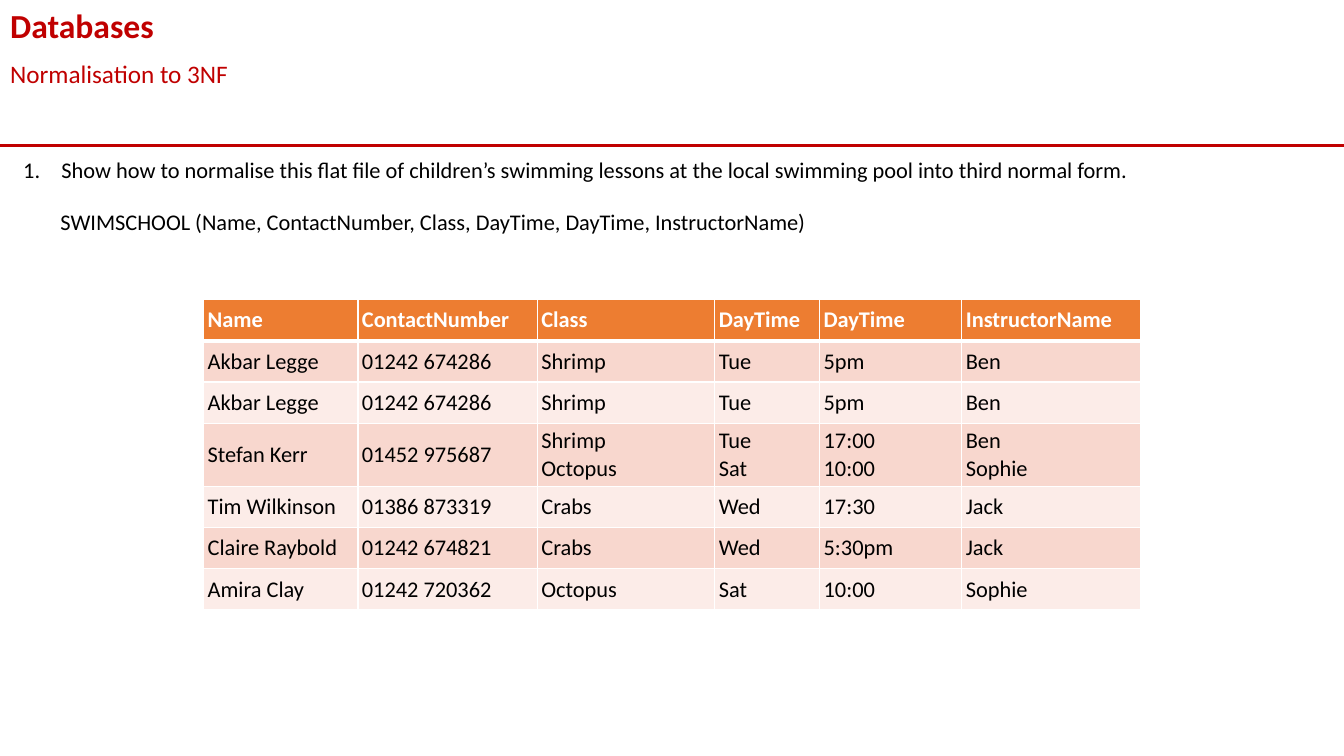
"""Build the Databases slide on normalisation to third normal form."""
from dataclasses import dataclass

from lxml import etree
from pptx import Presentation
from pptx import util as u
from pptx.dml.color import RGBColor
from pptx.enum import shapes, text
from pptx.oxml import ns

PX = u.Inches(1) // 100


@dataclass(frozen=True)
class Theme:
    font: str = "Calibri"
    accent: str = "C00000"
    ink: str = "000000"
    white: str = "FFFFFF"
    header: str = "ED7D31"
    bands: tuple[str, str] = ("F8D7CE", "FCECE8")
    title: int = 24
    subtitle: int = 18
    body: int = 16


@dataclass(frozen=True)
class Line:
    words: str
    margin: int = 0
    indent: int = 0
    number: str = ""
    before: int = 0


@dataclass(frozen=True)
class Block:
    box: tuple[int, int, int, int]
    lines: tuple[Line, ...]
    size: int
    color: str
    bold: bool = False


THEME = Theme()
WIDTH, HEIGHT = 1333, 750
RULE_TOP = 144
BLOCKS = (
    Block((0, 0, WIDTH, 50), (Line("Databases"),), THEME.title, THEME.accent, True),
    Block((0, 53, WIDTH, 40), (Line("Normalisation to 3NF"),), THEME.subtitle, THEME.accent),
    Block((13, 150, 1307, 91), (
        Line("Show how to normalise this flat file of children’s swimming lessons "
             "at the local swimming pool into third normal form.", 38, -38, "arabicPeriod"),
        Line("SWIMSCHOOL (Name, ContactNumber, Class, DayTime, DayTime, InstructorName)",
             37, before=18),
    ), THEME.body, THEME.ink),
)
TABLE_LEFT, TABLE_TOP, ROW_HEIGHT, CELL_MARGIN = 202, 297, 41, 4
COLUMN_WIDTHS = (153, 178, 176, 104, 141, 177)
LESSONS = (
    ("Name", "ContactNumber", "Class", "DayTime", "DayTime", "InstructorName"),
    ("Akbar Legge", "01242 674286", "Shrimp", "Tue", "5pm", "Ben"),
    ("Akbar Legge", "01242 674286", "Shrimp", "Tue", "5pm", "Ben"),
    ("Stefan Kerr", "01452 975687", "Shrimp\vOctopus", "Tue\vSat", "17:00\v10:00", "Ben\nSophie"),
    ("Tim Wilkinson", "01386 873319", "Crabs", "Wed", "17:30", "Jack"),
    ("Claire Raybold", "01242 674821", "Crabs", "Wed", "5:30pm", "Jack"),
    ("Amira Clay", "01242 720362", "Octopus", "Sat", "10:00", "Sophie"),
)


def apply(target, values: dict) -> None:
    for name, value in values.items():
        setattr(target, name, value)


def format_runs(paragraph, size: int, color: str, bold: bool) -> None:
    for run in paragraph.runs:
        apply(run.font, {"name": THEME.font, "size": u.Pt(size), "bold": bold})
        run.font.color.rgb = RGBColor.from_string(color)


def fill_placeholder(shape, block: Block) -> None:
    left, top, width, height = (value * PX for value in block.box)
    apply(shape, {"left": left, "top": top, "width": width, "height": height})
    frame = shape.text_frame
    frame.text = "\n".join(line.words for line in block.lines)
    apply(frame, {"word_wrap": True, "auto_size": text.MSO_AUTO_SIZE.NONE,
                  "vertical_anchor": text.MSO_ANCHOR.TOP})
    for paragraph, line in zip(frame.paragraphs, block.lines):
        properties = paragraph._p.get_or_add_pPr()
        properties.set("marL", str(line.margin * PX))
        properties.set("indent", str(line.indent * PX))
        if line.number:
            etree.SubElement(properties, ns.qn("a:buFont"), typeface="+mj-lt")
            etree.SubElement(properties, ns.qn("a:buAutoNum"), type=line.number)
        else:
            etree.SubElement(properties, ns.qn("a:buNone"))
        apply(paragraph, {"alignment": text.PP_ALIGN.LEFT, "line_spacing": 1.0,
                          "space_before": u.Pt(line.before), "space_after": u.Pt(0)})
        format_runs(paragraph, block.size, block.color, block.bold)


def add_rule(slide) -> None:
    rule = slide.shapes.add_connector(
        shapes.MSO_CONNECTOR.STRAIGHT, 0, RULE_TOP * PX, WIDTH * PX, RULE_TOP * PX)
    rule.line.color.rgb = RGBColor.from_string(THEME.accent)
    rule.line.width = u.Pt(2.25)
    etree.SubElement(rule._element.spPr, ns.qn("a:effectLst"))


def add_borders(cell, widths: dict[str, int]) -> None:
    properties = cell._tc.get_or_add_tcPr()
    for side, width in widths.items():
        border = etree.SubElement(properties, ns.qn(f"a:ln{side}"), w=str(u.Pt(width)))
        fill = etree.SubElement(border, ns.qn("a:solidFill"))
        etree.SubElement(fill, ns.qn("a:srgbClr"), val=THEME.white)


def format_cell(cell, words: str, row: int) -> None:
    is_header = row == 0
    cell.text = words
    apply(cell, {"vertical_anchor": text.MSO_ANCHOR.MIDDLE}
          | {f"margin_{side}": CELL_MARGIN * PX for side in ("left", "top", "right", "bottom")})
    add_borders(cell, {"L": 1, "R": 1, "T": 3 if row == 1 else 1, "B": 3 if is_header else 1})
    cell.fill.solid()
    color = THEME.header if is_header else THEME.bands[(row - 1) % 2]
    cell.fill.fore_color.rgb = RGBColor.from_string(color)
    for paragraph in cell.text_frame.paragraphs:
        format_runs(paragraph, THEME.body, THEME.white if is_header else THEME.ink, is_header)


def add_lessons(slide) -> None:
    table = slide.shapes.add_table(
        len(LESSONS), len(COLUMN_WIDTHS), TABLE_LEFT * PX, TABLE_TOP * PX,
        sum(COLUMN_WIDTHS) * PX, len(LESSONS) * ROW_HEIGHT * PX).table
    for column, width in zip(table.columns, COLUMN_WIDTHS):
        column.width = width * PX
    for row, lesson in enumerate(LESSONS):
        table.rows[row].height = ROW_HEIGHT * PX
        for column, words in enumerate(lesson):
            format_cell(table.cell(row, column), words, row)


def main() -> None:
    presentation = Presentation()
    apply(presentation, {"slide_width": WIDTH * PX, "slide_height": HEIGHT * PX})
    two_content = presentation.slide_layouts[3]
    slide = presentation.slides.add_slide(two_content)
    for shape, block in zip(slide.placeholders, BLOCKS):
        fill_placeholder(shape, block)
    add_rule(slide)
    add_lessons(slide)
    presentation.save("out.pptx")


if __name__ == "__main__":
    main()
